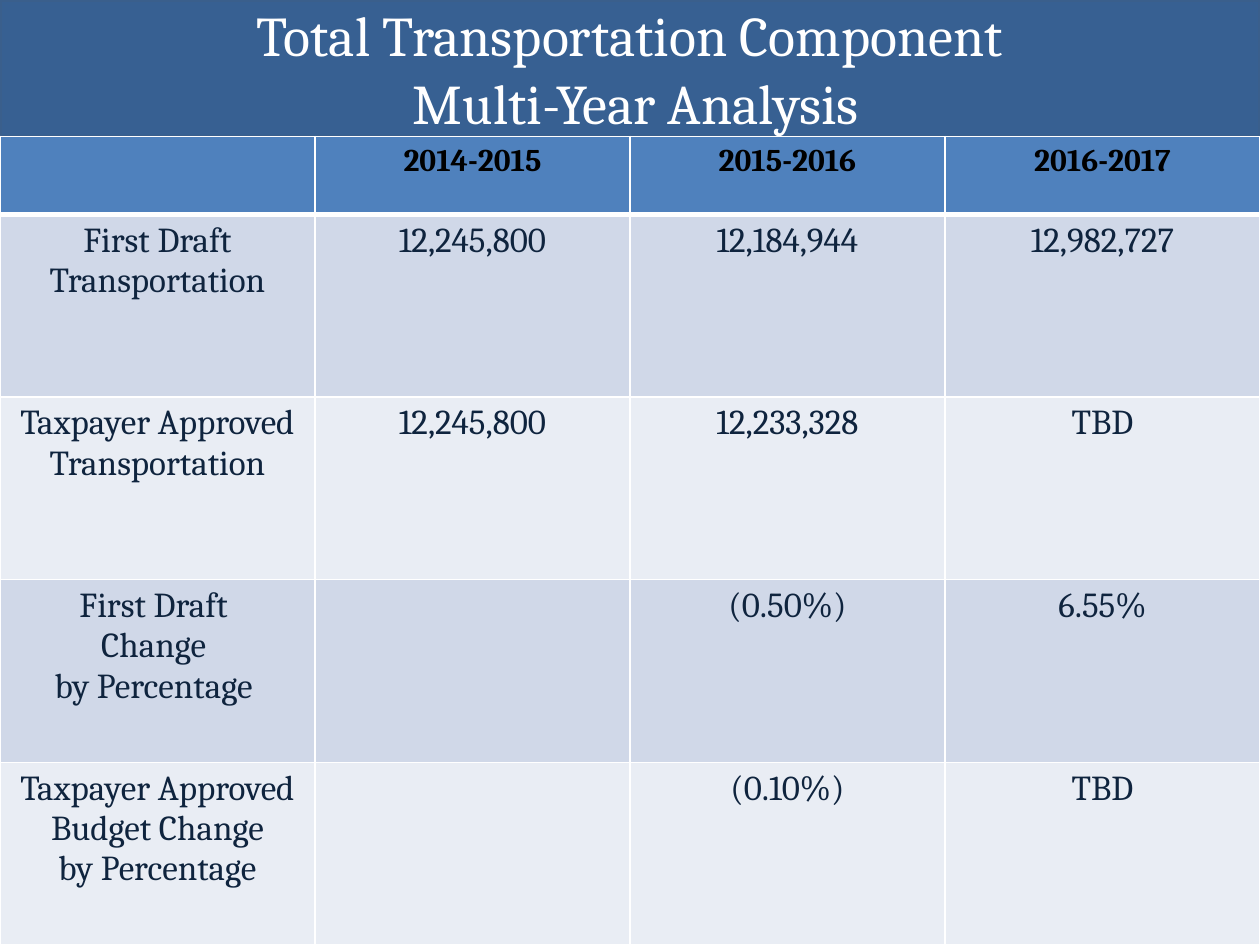
from lxml import etree
from pptx import Presentation
from pptx.dml.color import RGBColor
from pptx.enum import text
from pptx.oxml import ns
from pptx.util import Cm, Pt

FONT = "Cambria"
WHITE = RGBColor(0xFF, 0xFF, 0xFF)
BLACK = RGBColor(0x00, 0x00, 0x00)
NAVY = RGBColor(0x0F, 0x24, 0x3E)
TITLE_FILL = RGBColor(0x37, 0x60, 0x92)
TITLE_LINE = RGBColor(0x3A, 0x5F, 0x8C)
HEADER_FILL = RGBColor(0x4F, 0x81, 0xBD)
BAND_FILLS = (RGBColor(0xD0, 0xD8, 0xE8), RGBColor(0xE9, 0xED, 0xF4))

SLIDE_WIDTH, SLIDE_HEIGHT = Cm(25.4), Cm(19.05)
TITLE_HEIGHT = Cm(2.75)
HEADER_HEIGHT = Cm(1.57)

TITLE = "Total Transportation Component\n Multi-Year Analysis"
ROWS = [
    ["", "2014-2015", "2015-2016", "2016-2017"],
    ["First Draft Transportation", "12,245,800", "12,184,944", "12,982,727"],
    ["Taxpayer Approved Transportation", "12,245,800", "12,233,328", "TBD"],
    ["First Draft \nChange \nby Percentage ", "", "(0.50%)", "6.55%"],
    ["Taxpayer Approved Budget Change\nby Percentage", "", "(0.10%)", "TBD"],
]


def set_text(text_frame, content, size, color, bold=False):
    text_frame.text = content
    for paragraph in text_frame.paragraphs:
        paragraph.alignment = text.PP_ALIGN.CENTER
        for font in [paragraph.font] + [run.font for run in paragraph.runs]:
            font.name, font.size, font.bold = FONT, Pt(size), bold
            font.color.rgb = color


def set_borders(cell, bottom_width):
    """Draw white lines on all four sides of a cell."""
    properties = cell._tc.get_or_add_tcPr()
    widths = {"lnL": 1, "lnR": 1, "lnT": 1, "lnB": bottom_width}
    for index, (side, width) in enumerate(widths.items()):
        line = etree.Element(ns.qn(f"a:{side}"), w=str(Pt(width)))
        fill = etree.SubElement(line, ns.qn("a:solidFill"))
        etree.SubElement(fill, ns.qn("a:srgbClr"), val=str(WHITE))
        properties.insert(index, line)


def place_title(slide, left, top, width, height):
    title = slide.shapes.title
    title.left, title.top, title.width, title.height = left, top, width, height
    title.fill.solid()
    title.fill.fore_color.rgb = TITLE_FILL
    title.line.color.rgb = TITLE_LINE
    title.line.width = Pt(2)
    text_frame = title.text_frame
    set_text(text_frame, TITLE, 32, WHITE)
    text_frame.vertical_anchor = text.MSO_ANCHOR.MIDDLE
    text_frame.auto_size = text.MSO_AUTO_SIZE.NONE


def add_budget_table(slide, left, top, width, height):
    frame = slide.shapes.add_table(len(ROWS), len(ROWS[0]), left, top, width, height)
    table = frame.table
    body_height = (height - HEADER_HEIGHT) // (len(ROWS) - 1)
    for row_index, values in enumerate(ROWS):
        is_header = row_index == 0
        table.rows[row_index].height = HEADER_HEIGHT if is_header else body_height
        for column_index, value in enumerate(values):
            cell = table.cell(row_index, column_index)
            cell.fill.solid()
            if is_header:
                cell.fill.fore_color.rgb = HEADER_FILL
                set_text(cell.text_frame, value, 18, BLACK, bold=True)
            else:
                cell.fill.fore_color.rgb = BAND_FILLS[(row_index - 1) % 2]
                set_text(cell.text_frame, value, 20, NAVY)
            set_borders(cell, 3 if is_header else 1)


def main():
    presentation = Presentation()
    presentation.slide_width, presentation.slide_height = SLIDE_WIDTH, SLIDE_HEIGHT
    slide = presentation.slides.add_slide(presentation.slide_layouts[5])
    place_title(slide, 0, 0, SLIDE_WIDTH, TITLE_HEIGHT)
    add_budget_table(slide, 0, TITLE_HEIGHT, SLIDE_WIDTH, SLIDE_HEIGHT - TITLE_HEIGHT)
    presentation.save("out.pptx")


if __name__ == "__main__":
    main()
